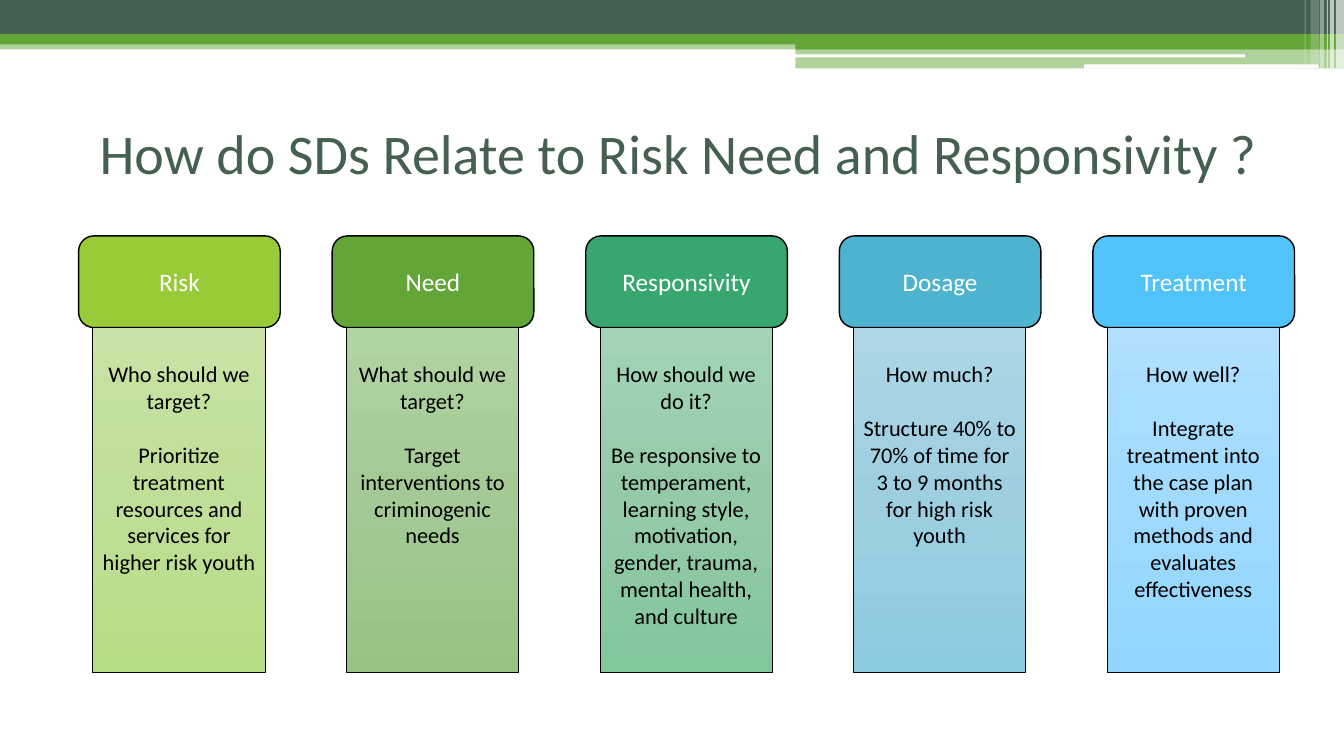
import copy

import lxml.etree
import pptx
import pptx.util
import pptx.dml.color
import pptx.enum.shapes
import pptx.enum.text
import pptx.oxml.ns

Inches = pptx.util.Inches
Pt = pptx.util.Pt
qn = pptx.oxml.ns.qn
SHAPES = pptx.enum.shapes.MSO_SHAPE
ALIGN = pptx.enum.text.PP_ALIGN
ANCHOR = pptx.enum.text.MSO_ANCHOR


def color(value):
    return pptx.dml.color.RGBColor.from_string(value)


def write(frame, *lines, size, ink, align=ALIGN.CENTER, anchor=ANCHOR.MIDDLE,
          side=0.1, top=0.05, gap=0):
    frame.word_wrap = True
    frame.vertical_anchor = anchor
    frame.margin_left = frame.margin_right = Inches(side)
    frame.margin_top = Inches(top)
    for index, line in enumerate(lines):
        paragraph = frame.add_paragraph() if index else frame.paragraphs[0]
        paragraph.alignment = align
        if index:
            paragraph.space_before = Pt(gap)
        run = paragraph.add_run()
        run.text = line
        run.font.name = "Calibri"
        run.font.size = Pt(size)
        run.font.color.rgb = color(ink)


class Deck:
    dark = "455F51"
    green = "63A537"
    white = "FFFFFF"
    black = "000000"

    def __init__(self):
        self.presentation = pptx.Presentation()
        self.presentation.slide_width = Inches(13.33)
        self.presentation.slide_height = Inches(7.5)
        self.slide = self.presentation.slides.add_slide(self.presentation.slide_layouts[6])

    def box(self, kind, place, border=0):
        shape = self.slide.shapes.add_shape(kind, *map(Inches, place))
        shape.shadow.inherit = False
        if border:
            shape.line.color.rgb = color(self.black)
            shape.line.width = Pt(border)
        else:
            shape.line.fill.background()
        return shape

    def band(self, place, fill, opacity=100, kind=SHAPES.RECTANGLE):
        band = self.box(kind, place)
        band.fill.solid()
        band.fill.fore_color.rgb = color(fill)
        if opacity < 100:
            tint = band._element.spPr.find(qn("a:solidFill")).find(qn("a:srgbClr"))
            lxml.etree.SubElement(tint, qn("a:alpha"), val=str(opacity * 1000))

    def title(self, wording, place):
        title = self.slide.shapes.add_textbox(*map(Inches, place))
        write(title.text_frame, wording, size=40, ink=self.dark, align=ALIGN.LEFT)

    def heading(self, wording, place, fill):
        heading = self.box(SHAPES.ROUNDED_RECTANGLE, place, border=1)
        heading.fill.solid()
        heading.fill.fore_color.rgb = color(fill)
        write(heading.text_frame, wording, size=18, ink=self.white)

    def panel(self, lines, place, shades):
        panel = self.box(SHAPES.RECTANGLE, place, border=0.5)
        panel.fill.gradient()
        panel.fill.gradient_angle = 270
        stop_list = panel._element.spPr.find(qn("a:gradFill")).find(qn("a:gsLst"))
        stop_list.insert(1, copy.deepcopy(stop_list[0]))
        for stop, position, shade in zip(panel.fill.gradient_stops, (0, 0.5, 1), shades):
            stop.position = position
            stop.color.rgb = color(shade)
        write(panel.text_frame, *lines, size=16, ink=self.black,
              anchor=ANCHOR.TOP, side=0.09, top=0.32, gap=19.5)


BANDS = [
    ((0, 0.4, 13.33, 0.09), Deck.green, 50),
    ((0, 0, 13.33, 0.34), Deck.dark, 100),
    ((0, 0.34, 13.33, 0.1), Deck.green, 100),
    ((7.89, 0.39, 5.44, 0.1), Deck.green, 100),
    ((7.89, 0.48, 5.44, 0.2), Deck.green, 50),
]
WHITE_RULES = [(7.88, 0.54, 4.47, 0.03), (10.75, 0.64, 2.33, 0.04)]
CORNER_STRIPES = [
    (13.25, 0.08, 0.68, 65),
    (13.19, 0.04, 0.68, 65),
    (13.16, 0.01, 0.68, 60),
    (13.09, 0.04, 0.68, 40),
    (13, 0.08, 0.64, 20),
    (12.94, 0.01, 0.64, 30),
]
PRINCIPLES = [
    ("Risk", "99CB38", ("C8E3A5", "BFDE97", "B7DD84"), "Who should we target?",
     "Prioritize treatment resources and services for higher risk youth"),
    ("Need", "63A537", ("B0D3A2", "A4C995", "95C482"), "What should we target?",
     "Target interventions to criminogenic needs"),
    ("Responsivity", "37A76F", ("A2D4B5", "95CAA9", "82C69C"), "How should we do it?",
     "Be responsive to temperament, learning style, motivation, gender, trauma, "
     "mental health, and culture"),
    ("Dosage", "4EB3CF", ("ACD6E6", "9ECFE1", "8CCAE0"), "How much?",
     "Structure 40% to 70% of time for 3 to 9 months for high risk youth"),
    ("Treatment", "51C3F9", ("B0E0FE", "A0DAFD", "90D6FF"), "How well?",
     "Integrate treatment into the case plan with proven methods and evaluates "
     "effectiveness"),
]
FIRST_LEFT, LAST_LEFT = 0.78, 10.84


def main():
    deck = Deck()
    for place, fill, opacity in BANDS:
        deck.band(place, fill, opacity)
    for place in WHITE_RULES:
        deck.band(place, Deck.white, kind=SHAPES.ROUNDED_RECTANGLE)
    for left, width, height, opacity in CORNER_STRIPES:
        deck.band((left, 0, width, height), Deck.white, opacity)

    deck.title("How do SDs Relate to Risk Need and Responsivity ?", (0.89, 0.98, 12.2, 1.06))

    pitch = (LAST_LEFT - FIRST_LEFT) / (len(PRINCIPLES) - 1)
    lefts = [FIRST_LEFT + pitch * column for column in range(len(PRINCIPLES))]
    for left, (name, fill, shades, question, answer) in zip(lefts, PRINCIPLES):
        deck.heading(name, (left, 2.34, 2, 0.91), fill)
        deck.panel((question, answer), (left + 0.14, 3.25, 1.71, 3.42), shades)

    deck.presentation.save("out.pptx")


if __name__ == "__main__":
    main()
